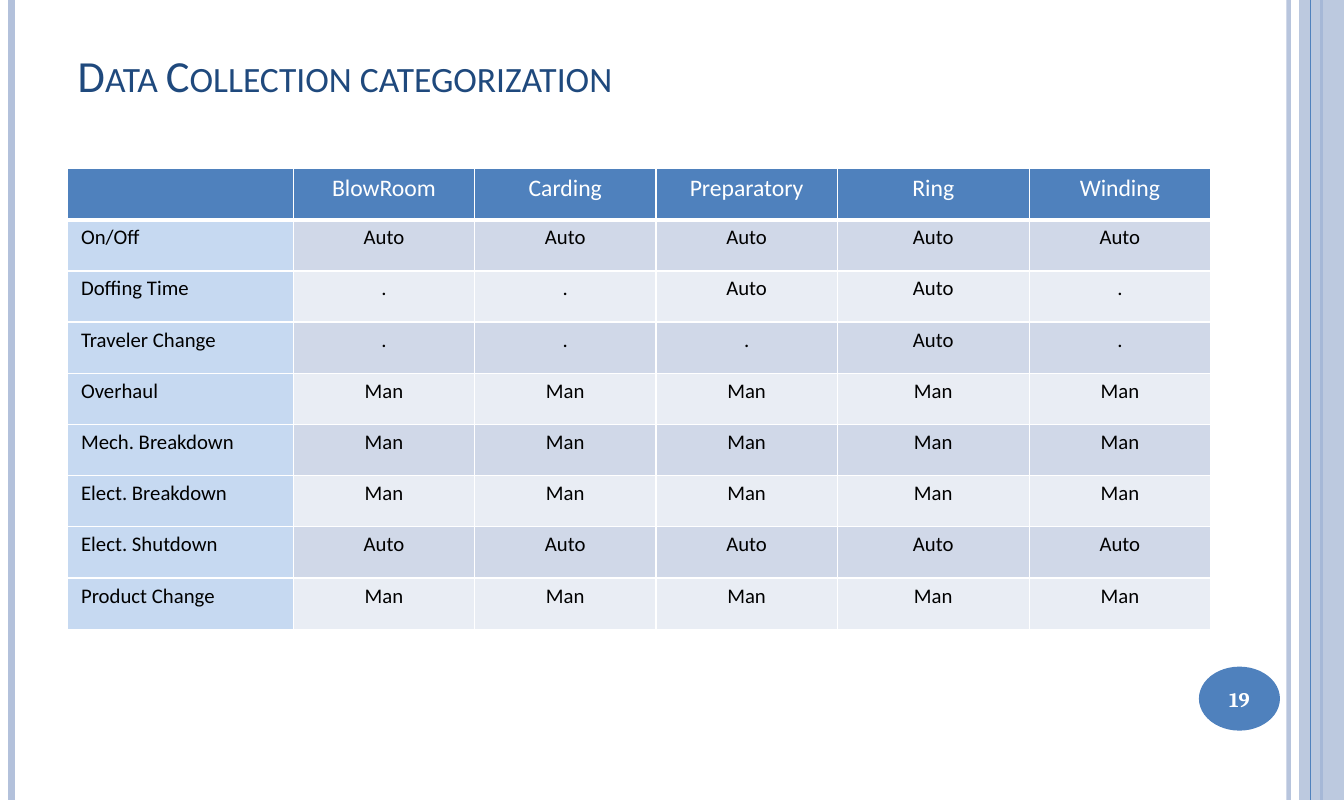
from dataclasses import dataclass

from lxml.etree import SubElement
from pptx import Presentation
from pptx.dml.color import RGBColor
from pptx.enum.shapes import MSO_CONNECTOR as Connector, MSO_SHAPE as Shape
from pptx.enum.text import MSO_ANCHOR as Anchor, PP_ALIGN as Align
from pptx.oxml.ns import qn
from pptx.util import Inches, Pt

WIDTH, HEIGHT = 12.6, 7.5
COLUMNS, ROWS = 126, 75


@dataclass(frozen=True)
class Theme:
    accent: str = "4F81BD"
    rail: str = "B3C1DB"
    title: str = "1F497D"
    label: str = "C6D9F1"
    bands: tuple = ("D0D8E8", "E9EDF4")
    white: str = "FFFFFF"
    black: str = "000000"
    body_font: str = "Calibri"
    number_font: str = "Cambria"
    title_size: int = 30
    header_size: int = 16
    body_size: int = 14


def set_all(target, values):
    for name, value in values.items():
        setattr(target, name, value)


def set_alpha(element, percent):
    for color in element.iter(qn("a:srgbClr")):
        SubElement(color, qn("a:alpha"), val=str(percent * 1000))


class SlideBuilder:
    """Places elements on a grid of COLUMNS by ROWS cells."""

    def __init__(self, slide, theme):
        self.slide = slide
        self.theme = theme

    def x(self, columns):
        return Inches(WIDTH * columns / COLUMNS)

    def y(self, rows):
        return Inches(HEIGHT * rows / ROWS)

    def box(self, left, top, width, height):
        return self.x(left), self.y(top), self.x(width), self.y(height)

    def rail(self, column, color, weight, alpha=100):
        """Draws a vertical line over the full height of the slide."""
        line = self.slide.shapes.add_connector(
            Connector.STRAIGHT, self.x(column), 0, self.x(column), self.y(ROWS))
        line.line.color.rgb = RGBColor.from_string(color)
        line.line.width = Pt(weight)
        properties = line._element.spPr
        SubElement(properties, qn("a:effectLst"))
        if alpha < 100:
            set_alpha(properties, alpha)

    def shape(self, kind, place, color, alpha=100):
        shape = self.slide.shapes.add_shape(kind, *self.box(*place))
        shape.shadow.inherit = False
        shape.fill.solid()
        shape.fill.fore_color.rgb = RGBColor.from_string(color)
        shape.line.fill.background()
        if alpha < 100:
            set_alpha(shape._element.spPr, alpha)

    def run(self, paragraph, text, size, color, font=None, bold=False, **extras):
        """Adds a run; extras are character attributes such as cap."""
        run = paragraph.add_run()
        run.text = text
        set_all(run.font, {"name": font or self.theme.body_font, "size": Pt(size), "bold": bold})
        run.font.color.rgb = RGBColor.from_string(color)
        for name, value in extras.items():
            run._r.get_or_add_rPr().set(name, value)

    def text(self, place, text, size, color, align, anchor, **run_format):
        frame = self.slide.shapes.add_textbox(*self.box(*place)).text_frame
        set_all(frame, {"word_wrap": True, "vertical_anchor": anchor})
        paragraph = frame.paragraphs[0]
        paragraph.alignment = align
        self.run(paragraph, text, size, color, **run_format)

    def cell(self, cell, text, fill, size, color, align, bottom):
        set_all(cell, {"margin_left": Inches(0.13), "margin_right": Inches(0.13),
                       "margin_top": Inches(0.05), "margin_bottom": Inches(0.05)})
        properties = cell._tc.get_or_add_tcPr()
        for side, weight in {"L": 1, "R": 1, "T": 1, "B": bottom}.items():
            border = SubElement(properties, qn(f"a:ln{side}"), w=str(Pt(weight)))
            solid = SubElement(border, qn("a:solidFill"))
            SubElement(solid, qn("a:srgbClr"), val=self.theme.white)
        cell.fill.solid()
        cell.fill.fore_color.rgb = RGBColor.from_string(fill)
        paragraph = cell.text_frame.paragraphs[0]
        paragraph.alignment = align
        if text:
            self.run(paragraph, text, size, color)

    def table(self, left, top, widths, row_height, rows):
        theme = self.theme
        place = self.box(left, top, sum(widths), row_height * len(rows))
        table = self.slide.shapes.add_table(len(rows), len(widths), *place).table
        for column, width in zip(table.columns, widths):
            column.width = self.x(width)
        for r, values in enumerate(rows):
            table.rows[r].height = self.y(row_height)
            for c, value in enumerate(values):
                align = Align.CENTER if c else Align.LEFT
                if r == 0:
                    style = theme.accent, theme.header_size, theme.white, align, 3
                else:
                    fill = theme.bands[(r - 1) % 2] if c else theme.label
                    style = fill, theme.body_size, theme.black, align, 1
                self.cell(table.cell(r, c), value, *style)


COLLECTION = [
    ["", "BlowRoom", "Carding", "Preparatory", "Ring", "Winding"],
    ["On/Off"] + ["Auto"] * 5,
    ["Doffing Time", ".", ".", "Auto", "Auto", "."],
    ["Traveler Change", ".", ".", ".", "Auto", "."],
    ["Overhaul"] + ["Man"] * 5,
    ["Mech. Breakdown"] + ["Man"] * 5,
    ["Elect. Breakdown"] + ["Man"] * 5,
    ["Elect. Shutdown"] + ["Auto"] * 5,
    ["Product Change"] + ["Man"] * 5,
]


def main():
    theme = Theme()
    presentation = Presentation()
    set_all(presentation, {"slide_width": Inches(WIDTH), "slide_height": Inches(HEIGHT)})
    builder = SlideBuilder(presentation.slides.add_slide(presentation.slide_layouts[6]), theme)

    builder.rail(120.8, theme.rail, 3, alpha=93)
    builder.rail(1.1, theme.rail, 4.5)
    builder.rail(123.9, theme.accent, 1.5)
    builder.shape(Shape.RECTANGLE, (121.8, 0, 4.2, ROWS), theme.rail, alpha=87)
    builder.rail(122.9, theme.accent, 0.75)
    builder.shape(Shape.OVAL, (112.4, 62.5, 7.6, 6), theme.accent)

    builder.text((6.3, 3, 102.9, 7), "Data Collection categorization", theme.title_size,
                 theme.title, Align.LEFT, Anchor.BOTTOM, cap="small")
    builder.text((112, 62.7, 8.4, 5.7), "19", theme.body_size, theme.white,
                 Align.CENTER, Anchor.MIDDLE, font=theme.number_font, bold=True)
    builder.table(6.3, 15.8, (21.2, 17, 17, 17, 18, 17), 4.8, COLLECTION)

    presentation.save("out.pptx")


if __name__ == "__main__":
    main()
